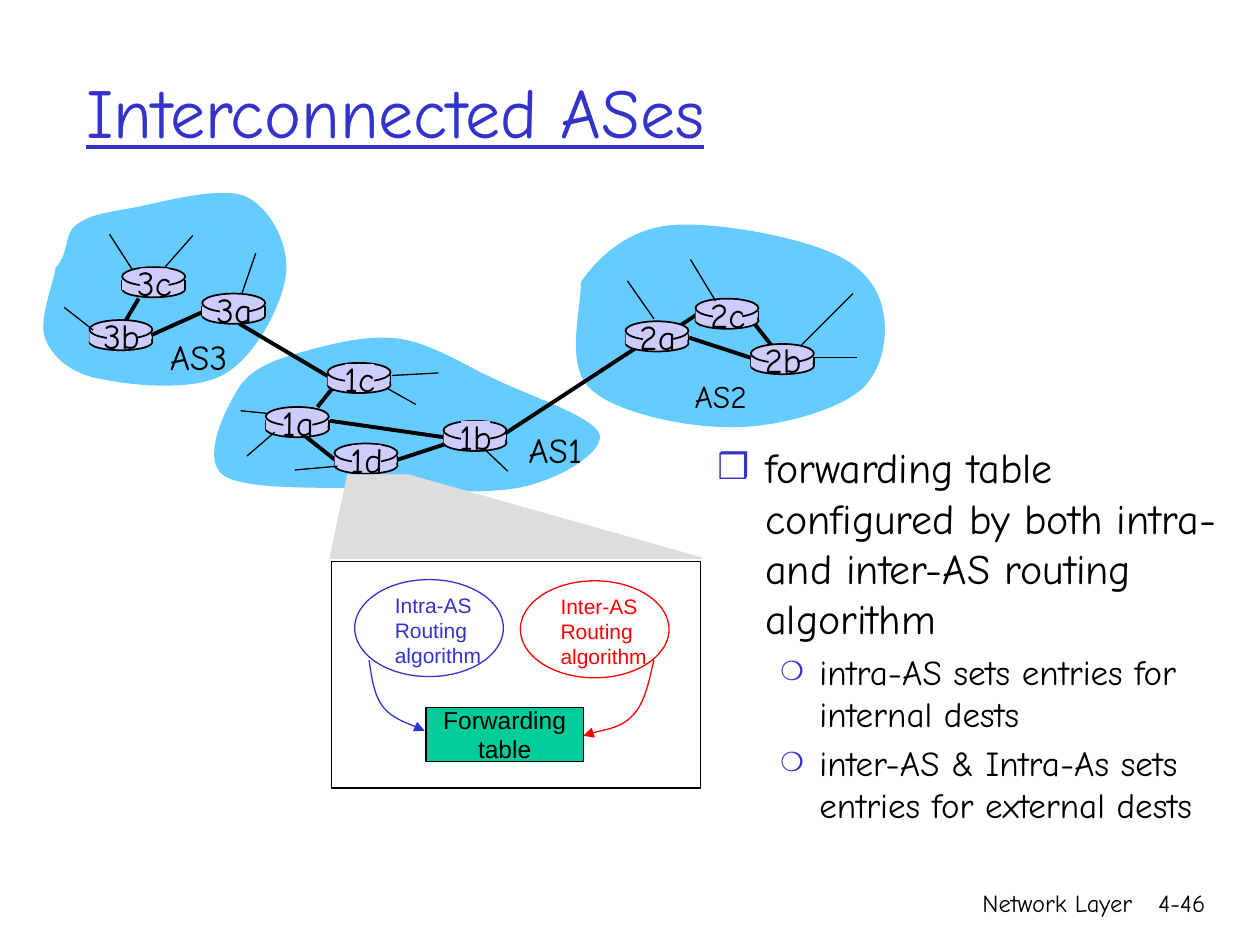
from lxml import etree
from pptx import Presentation
from pptx.dml.color import RGBColor
from pptx.enum.shapes import MSO_CONNECTOR, MSO_SHAPE
from pptx.enum.text import MSO_ANCHOR, MSO_AUTO_SIZE, PP_ALIGN
from pptx.oxml.ns import qn
from pptx.util import Inches, Pt

STRAIGHT = MSO_CONNECTOR.STRAIGHT
RECT, OVAL = MSO_SHAPE.RECTANGLE, MSO_SHAPE.OVAL
LEFT, CENTER, RIGHT = PP_ALIGN.LEFT, PP_ALIGN.CENTER, PP_ALIGN.RIGHT
TOP, MIDDLE = MSO_ANCHOR.TOP, MSO_ANCHOR.MIDDLE
NO_FIT = MSO_AUTO_SIZE.NONE

BLACK = RGBColor(0x00, 0x00, 0x00)
BLUE = RGBColor(0x33, 0x33, 0xCC)
RED = RGBColor(0xFF, 0x00, 0x00)
SKY = RGBColor(0x66, 0xCC, 0xFF)
LILAC = RGBColor(0xCC, 0xCC, 0xFF)
GREY = RGBColor(0xDD, 0xDD, 0xDD)
GREEN = RGBColor(0x00, 0xCC, 0x99)
HAND, SANS = "Comic Neue", "Arial"

COLS, ROWS = 100, 75
CELL = Inches(10) // COLS

CLOUDS = [
    [(46.1, 22.4), (47.4, 20.5), (49.7, 18.3), (53, 17.9), (56.2, 17.5), (62.8, 18.7),
     (65.6, 19.9), (68.5, 21), (69.7, 22.8), (70.1, 24.7), (70.5, 26.6), (70.1, 29.7),
     (68, 31.2), (66, 32.7), (61.3, 34), (57.8, 33.9), (54.2, 33.9), (48.7, 32.7),
     (46.8, 30.8), (44.8, 28.9), (46.2, 24.2), (46.1, 22.4)],
    [(4.4, 21.3), (5.6, 19.9), (5, 18.7), (6, 17.9), (7, 17.1), (8.2, 16.9),
     (10.5, 16.5), (12.7, 16.1), (17.5, 14.7), (19.5, 15.6), (21.5, 16.5), (23, 19.5),
     (22.7, 21.8), (22.4, 24.2), (20.3, 28.3), (17.8, 29.7), (15.4, 31.1), (10.5, 30.6),
     (8.1, 30.1), (5.7, 29.7), (4.2, 28.4), (3.6, 26.9), (3, 25.4), (4.3, 22.4), (4.4, 21.3)],
    [(19, 30.7), (20.1, 29.1), (22, 28.5), (24.1, 27.9), (26.3, 27.3), (29.3, 26.5),
     (31.8, 26.9), (34.3, 27.3), (36.7, 28.9), (39.3, 30.1), (42, 31.4), (47.2, 33.1),
     (47.6, 34.5), (47.9, 35.9), (44.6, 37.9), (41.7, 38.6), (38.7, 39.3), (33.9, 38.9),
     (29.9, 38.8), (25.9, 38.6), (19.5, 39), (17.7, 37.7), (15.9, 36.3), (18, 32.3), (19, 30.7)],
]
LINKS = [
    (54.7, 26.8, 59.6, 28.4), (59.8, 25.6, 61.3, 27.5), (53.6, 26.1, 55.4, 24.9),
    (31.5, 36.5, 35.8, 35.1), (24.2, 34.6, 26.6, 36.5), (26.2, 33.4, 35.2, 34.7),
    (25.2, 32.3, 26.4, 30.8), (12, 26.6, 16, 24.8), (19, 25.7, 26.1, 29.9),
    (40.1, 34.4, 50.5, 27.6), (11, 23.7, 10, 25.4),
]
STUBS = [
    (5.1, 24.4, 7.4, 26.2), (15.3, 18.7, 13.1, 21.2), (8.7, 18.6, 10.5, 21.4),
    (20.3, 20.1, 19.2, 23.3), (64.5, 28.4, 68, 28.4), (63.6, 27.4, 67.7, 23.3),
    (56.8, 23.9, 54.8, 20.6), (51.9, 25.3, 49.8, 22.3), (21.8, 34.3, 19.6, 36.2),
    (21.1, 32.8, 19.1, 32.6), (26.8, 37, 23.4, 37.3), (31.1, 29.8, 34.8, 29.6),
    (38.4, 35.6, 40.3, 37.4), (30.7, 30.8, 33, 32.1),
]
ROUTERS = [
    ("3a", 16.05, 23.3, 0.2, 1.8), ("3b", 7.1, 25.4, 0.2, 2), ("3c", 9.7, 21.2, 0.1, 2.1),
    ("1a", 21.1, 32.3, 0.4, 1.5), ("1b", 35.2, 33.4, 0, 2.1), ("1c", 26, 28.8, 0.1, 2.1),
    ("1d", 26.55, 35.2, 0.1, 2.1), ("2a", 49.65, 25.5, 0.2, 1.9),
    ("2b", 59.6, 27.3, 0.2, 1.8), ("2c", 55.2, 23.7, 0.2, 1.9),
]


def grid(*cells):
    return [round(c * CELL) for c in cells]


def write(tf, lines, size=20, font=HAND, color=BLACK, align=LEFT, anchor=TOP,
          wrap=False, underline=None):
    tf.word_wrap = wrap
    tf.auto_size = NO_FIT
    tf.vertical_anchor = anchor
    for i, text in enumerate(lines):
        p = tf.paragraphs[0] if i == 0 else tf.add_paragraph()
        p.alignment = align
        r = p.add_run()
        r.text = text
        r.font.size = Pt(size)
        r.font.name = font
        r.font.color.rgb = color
        r.font.underline = underline


def label(s, box, lines, **fmt):
    write(s.shapes.add_textbox(*grid(*box)).text_frame, lines, **fmt)


def paint(sp, fill=None, line=None, width=0.75):
    sp.shadow.inherit = False
    if fill is None:
        sp.fill.background()
    else:
        sp.fill.solid()
        sp.fill.fore_color.rgb = fill
    if line is None:
        sp.line.fill.background()
    else:
        sp.line.color.rgb = line
        sp.line.width = Pt(width)


def shape(s, kind, box, **look):
    sp = s.shapes.add_shape(kind, *grid(*box))
    paint(sp, **look)
    return sp


def line(s, ends, width):
    c = s.shapes.add_connector(STRAIGHT, *grid(*ends))
    c.line.color.rgb = BLACK
    c.line.width = Pt(width)
    etree.SubElement(c._element.spPr, qn("a:effectLst"))


def outline(s, points, close=True, **look):
    fb = s.shapes.build_freeform(*grid(*points[0]))
    fb.add_line_segments([grid(*pt) for pt in points[1:]], close=close)
    sp = fb.convert_to_shape()
    paint(sp, **look)
    return sp


def curve(s, knots, close=True, **look):
    sp = outline(s, knots, close, **look)
    sides = list(sp._element.iter(qn("a:lnTo")))
    for i in range(0, len(knots) - 1, 3):
        bend = etree.Element(qn("a:cubicBezTo"))
        sides[i].addprevious(bend)
        for side in sides[i:i + 3]:
            bend.append(side[0])
            side.getparent().remove(side)
    return sp


def arrow(s, knots, color):
    sp = curve(s, knots, close=False, line=color)
    etree.SubElement(sp.line._get_or_add_ln(), qn("a:tailEnd"), type="triangle")


def router(s, name, x, y, gap_top, gap_height):
    shape(s, OVAL, (x, y + 1.1, 5, 1.3), fill=LILAC, line=BLACK, width=1)
    for side in (x, x + 5):
        line(s, (side, y + 1, side, y + 1.8), 1)
    shape(s, RECT, (x, y + 1, 4.9, 0.8), fill=LILAC)
    shape(s, OVAL, (x, y, 5, 1.5), fill=LILAC, line=BLACK, width=1)
    shape(s, RECT, (x + 1.4, y + gap_top, 2.3, gap_height), fill=LILAC)
    label(s, (x, y - 0.92, 5.1, 4.3), [name], align=CENTER)


def algorithm(s, x, y, name, color):
    shape(s, OVAL, (x, y, 11.8, 7.7), line=color)
    label(s, (x + 2.2, y + 0.5, 8.8, 7), [name, "Routing", "algorithm"],
          size=12, font=SANS, color=color)


def network(s):
    for knots in CLOUDS:
        curve(s, knots, fill=SKY)
    for ends in LINKS:
        line(s, ends, 2.25)
    for spot in ROUTERS:
        router(s, *spot)
    for ends in STUBS:
        line(s, ends, 0.75)
    label(s, (12.5, 26.15, 7.7, 4.3), ["AS3"])
    label(s, (40.95, 33.5, 7.2, 4.3), ["AS1"])
    label(s, (54.15, 29.4, 7.1, 4), ["AS2"], size=18)


def router_detail(s):
    outline(s, [(26.2, 44.3), (27.6, 37.7), (32.4, 37.7), (55.7, 44.3)], fill=GREY, line=GREY)
    shape(s, RECT, (26.3, 44.55, 29.3, 18), line=BLACK)
    algorithm(s, 28.15, 46, "Intra-AS", BLUE)
    algorithm(s, 41.3, 46.1, "Inter-AS", RED)
    table = shape(s, RECT, (33.8, 56.13, 12.5, 4.3), fill=GREEN, line=BLACK)
    write(table.text_frame, ["Forwarding", "table"], size=14, font=SANS,
          align=CENTER, anchor=MIDDLE)
    arrow(s, [(29.3, 52.4), (29.5, 53.8), (29.7, 55.2), (30.4, 56.1),
              (31.1, 57), (33.1, 57.7), (33.7, 58)], BLUE)
    arrow(s, [(51.9, 52.4), (51.5, 54.1), (51.2, 55.8), (50.2, 56.8),
              (49.3, 57.8), (46.9, 58.1), (46.3, 58.4)], RED)


def place(sp, box):
    sp.left, sp.top, sp.width, sp.height = grid(*box)
    return sp.text_frame


def bullet(p, char, level, size, indent, hang, share):
    p.level = level
    p.space_before = Pt(size * 0.2)
    p.runs[0].font.size = Pt(size)
    pPr = p._p.get_or_add_pPr()
    pPr.set("marL", str(Inches(indent)))
    pPr.set("indent", str(-Inches(hang)))
    color = etree.SubElement(pPr, qn("a:buClr"))
    etree.SubElement(color, qn("a:srgbClr"), val=str(BLUE))
    etree.SubElement(pPr, qn("a:buSzPct"), val=str(share * 1000))
    etree.SubElement(pPr, qn("a:buChar"), char=char)


def wording(s):
    write(place(s.shapes.title, (5.83, 2.5, 85, 12.5)), ["Interconnected ASes"],
          size=40, color=BLUE, anchor=MIDDLE, wrap=True, underline=True)
    tf = place(s.placeholders[1], (55.93, 34.55, 41.7, 37.2))
    write(tf, ["forwarding table configured by both intra- and inter-AS routing algorithm",
               "intra-AS sets entries for internal dests",
               "inter-AS & Intra-As sets entries for external dests"], wrap=True)
    first, *rest = tf.paragraphs
    bullet(first, "❒", 0, 24, 0.38, 0.38, 85)
    for p in rest:
        bullet(p, "❍", 1, 20, 0.81, 0.31, 75)
    label(s, (59.15, 70, 31.7, 5), ["Network Layer"], size=14, align=RIGHT, wrap=True)
    label(s, (89.25, 70, 7.4, 5), ["4-46"], size=14, align=RIGHT, wrap=True)


def main():
    prs = Presentation()
    prs.slide_width, prs.slide_height = grid(COLS, ROWS)
    s = prs.slides.add_slide(prs.slide_layouts[1])
    wording(s)
    network(s)
    router_detail(s)
    prs.save("out.pptx")


if __name__ == "__main__":
    main()
